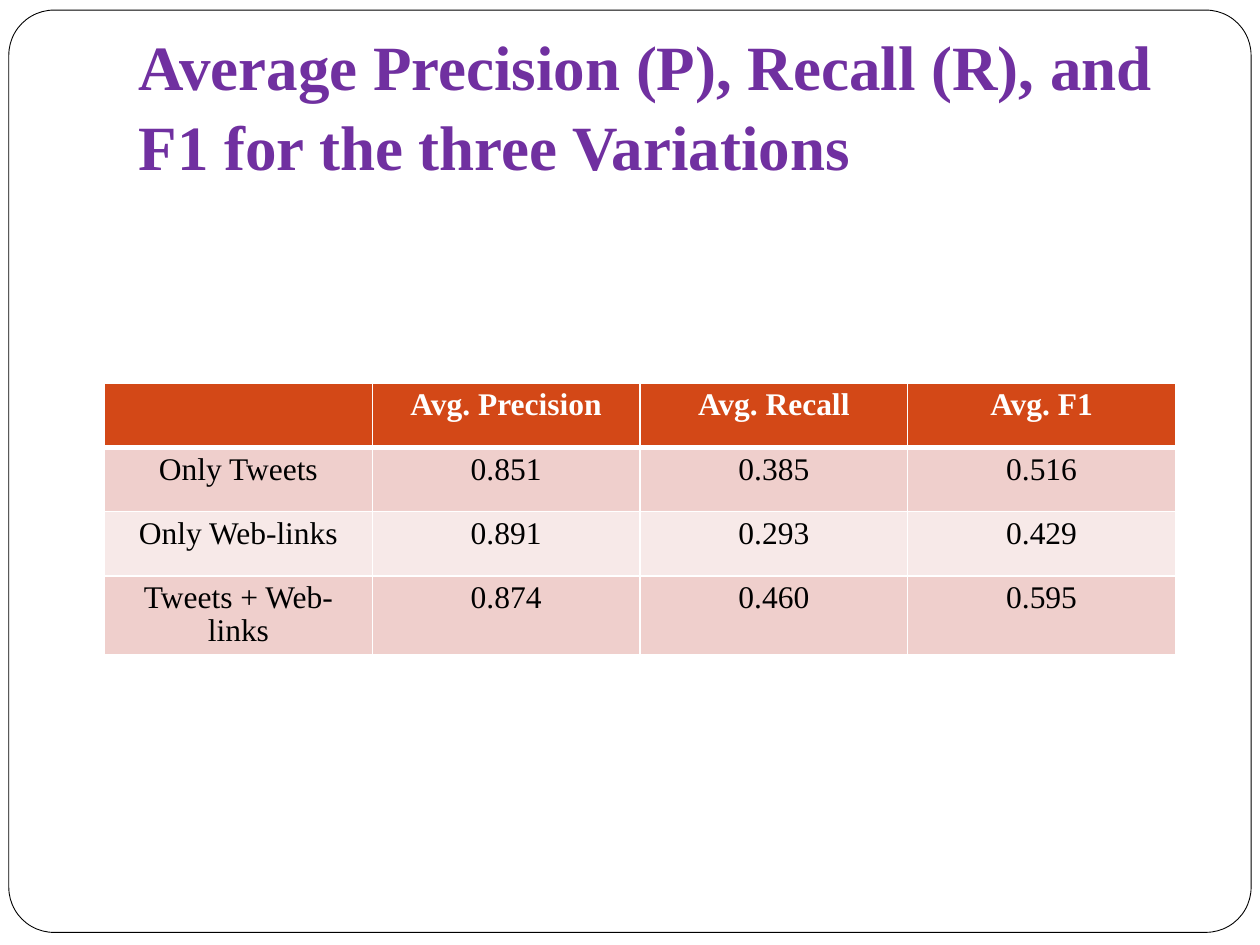
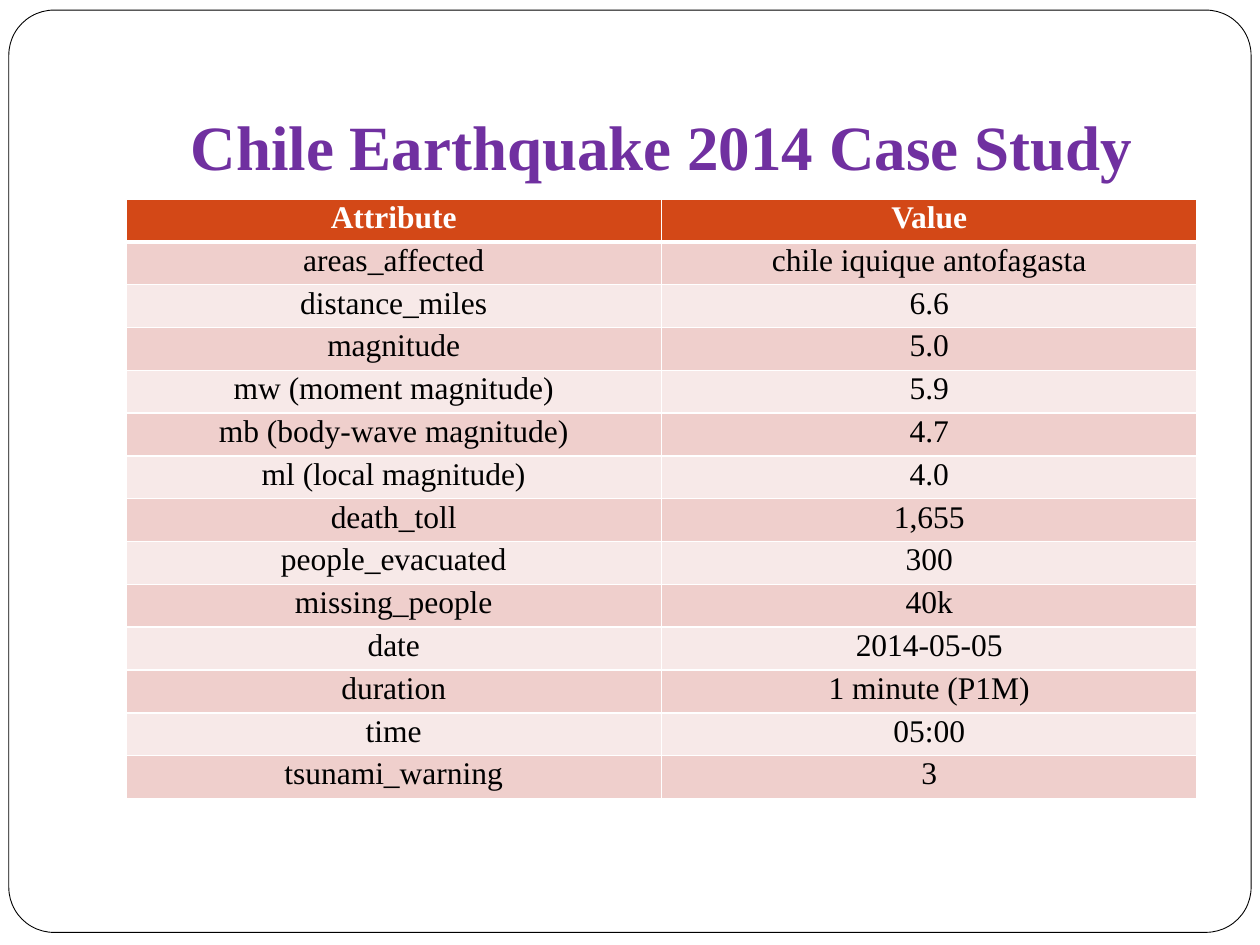
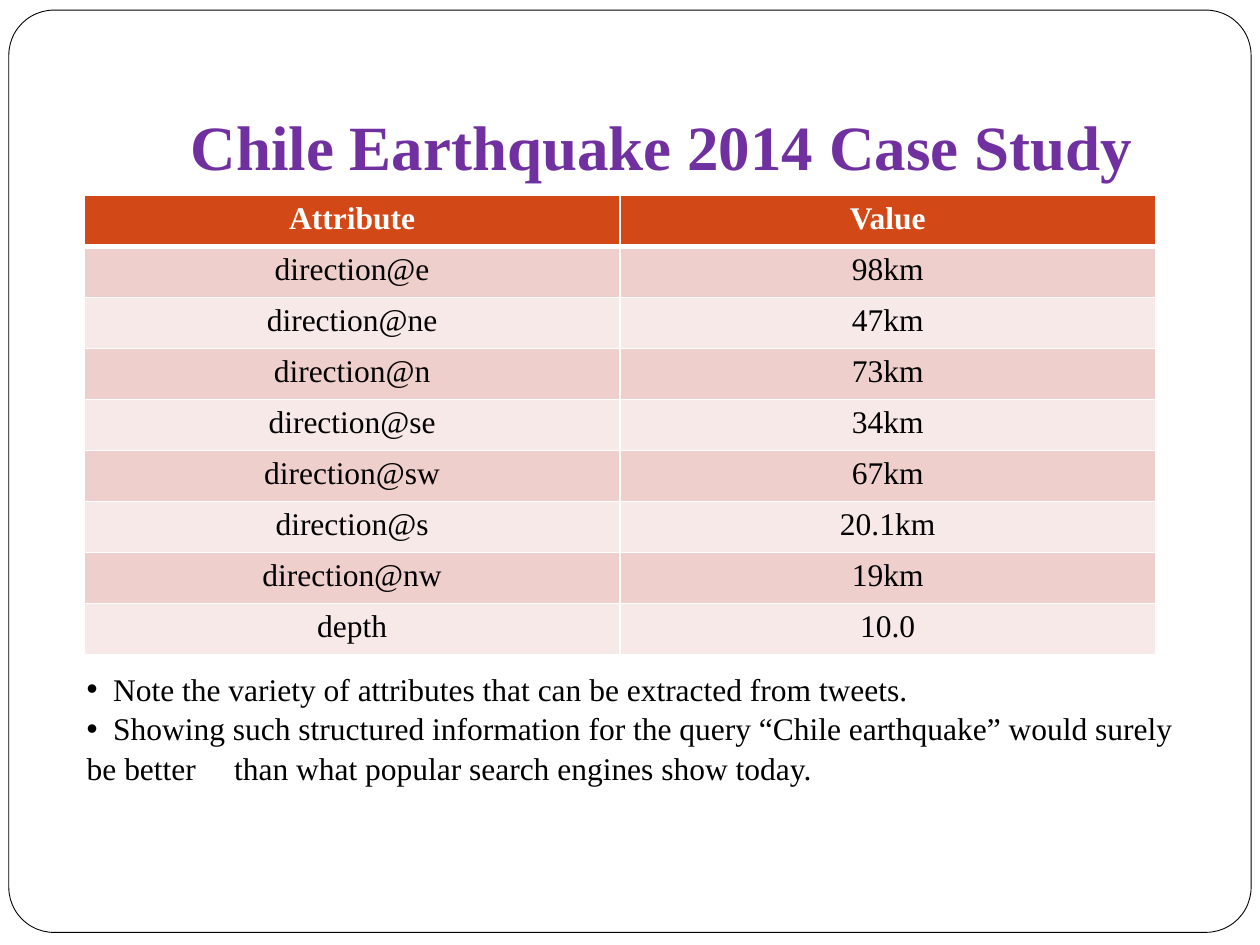
from dataclasses import dataclass

import lxml.etree
import pptx
import pptx.dml.color
import pptx.enum.shapes
import pptx.enum.text
import pptx.oxml.ns
import pptx.presentation
import pptx.shapes.autoshape
import pptx.slide
import pptx.table
import pptx.text.text
import pptx.util

Inches = pptx.util.Inches
Pt = pptx.util.Pt
RGBColor = pptx.dml.color.RGBColor
Align = pptx.enum.text.PP_ALIGN
qn = pptx.oxml.ns.qn

FONT = "Times New Roman"
WHITE = RGBColor(0xFF, 0xFF, 0xFF)
BLACK = RGBColor(0x00, 0x00, 0x00)
PURPLE = RGBColor(0x70, 0x30, 0xA0)
HEADER = RGBColor(0xD3, 0x48, 0x17)
BAND_DARK = RGBColor(0xEF, 0xCF, 0xCC)
BAND_LIGHT = RGBColor(0xF7, 0xE9, 0xE8)
TABLE_WIDTH = 8.5
TITLE_SIZE = 36
BODY_SIZE = 18
TITLE_SPACING = 1.05
NOTE_SPACING = 1.05
NOTE_TABS = (0.21, 1.17)


@dataclass
class TableSpec:
    left: float
    top: float
    row_height: float
    rows: list[tuple[str, ...]]
    margin: float = 0.05
    line_spacing: float = 1.0


@dataclass
class SlideSpec:
    title: str
    align: Align
    table: TableSpec
    notes: tuple[str, ...] = ()


CASE_TITLE = "Chile Earthquake 2014 Case Study"

SLIDES = [
    SlideSpec(
        "Average Precision (P), Recall (R), and F1 for the three Variations",
        Align.LEFT,
        TableSpec(0.83, 3.04, 0.51, [
            ("", "Avg. Precision", "Avg. Recall", "Avg. F1"),
            ("Only Tweets", "0.851", "0.385", "0.516"),
            ("Only Web-links", "0.891", "0.293", "0.429"),
            ("Tweets + Web-links", "0.874", "0.460", "0.595"),
        ], line_spacing=0.95),
    ),
    SlideSpec(
        CASE_TITLE,
        Align.CENTER,
        TableSpec(1, 1.58, 0.34, [
            ("Attribute", "Value"),
            ("areas_affected", "chile iquique antofagasta"),
            ("distance_miles", "6.6"),
            ("magnitude", "5.0"),
            ("mw (moment magnitude)", "5.9"),
            ("mb (body-wave magnitude)", "4.7"),
            ("ml (local magnitude)", "4.0"),
            ("death_toll", "1,655"),
            ("people_evacuated", "300"),
            ("missing_people", "40k"),
            ("date", "2014-05-05"),
            ("duration", "1 minute (P1M)"),
            ("time", "05:00"),
            ("tsunami_warning", "3"),
        ], margin=0.01),
    ),
    SlideSpec(
        CASE_TITLE,
        Align.CENTER,
        TableSpec(0.67, 1.55, 0.405, [
            ("Attribute", "Value"),
            ("direction@e", "98km"),
            ("direction@ne", "47km"),
            ("direction@n", "73km"),
            ("direction@se", "34km"),
            ("direction@sw", "67km"),
            ("direction@s", "20.1km"),
            ("direction@nw", "19km"),
            ("depth", "10.0"),
        ]),
        (
            "\tNote the variety of attributes that can be extracted from tweets.",
            "\tShowing such structured information for the query “Chile earthquake” "
            "would surely be better\tthan what popular search engines show today.",
        ),
    ),
]


def style_runs(p: pptx.text.text._Paragraph, size: int, color: RGBColor, bold: bool = False) -> None:
    for r in p.runs:
        r.font.name = FONT
        r.font.size = Pt(size)
        r.font.bold = bold
        r.font.color.rgb = color


def add_frame(s: pptx.slide.Slide) -> None:
    """Draw the rounded page outline behind everything else."""
    sp = s.shapes.add_shape(
        pptx.enum.shapes.MSO_SHAPE.ROUNDED_RECTANGLE,
        Inches(0.07), Inches(0.08), Inches(9.86), Inches(7.32),
    )
    sp.adjustments[0] = 0.049
    sp.shadow.inherit = False
    sp.fill.solid()
    sp.fill.fore_color.rgb = WHITE
    sp.line.color.rgb = BLACK
    sp.line.width = Pt(0.5)
    s.shapes.title._element.addprevious(sp._element)


def set_title(s: pptx.slide.Slide, text: str, align: Align) -> None:
    sp = s.shapes.title
    sp.left, sp.top, sp.width, sp.height = Inches(1), Inches(0.3), Inches(8.5), Inches(1.25)
    tf = sp.text_frame
    tf.text = text
    tf.word_wrap = True
    tf.auto_size = pptx.enum.text.MSO_AUTO_SIZE.NONE
    tf.vertical_anchor = pptx.enum.text.MSO_ANCHOR.BOTTOM
    tf.margin_left = tf.margin_right = tf.margin_bottom = Inches(0.1)
    tf.margin_top = Inches(0.05)
    p = tf.paragraphs[0]
    p.alignment = align
    p.line_spacing = TITLE_SPACING
    style_runs(p, TITLE_SIZE, PURPLE, bold=True)


def set_borders(cell: pptx.table._Cell, top: float, bottom: float) -> None:
    tc_pr = cell._tc.get_or_add_tcPr()
    for side, width in (("L", 1), ("R", 1), ("T", top), ("B", bottom)):
        ln = lxml.etree.SubElement(tc_pr, qn(f"a:ln{side}"), w=str(Pt(width)))
        fill = lxml.etree.SubElement(ln, qn("a:solidFill"))
        lxml.etree.SubElement(fill, qn("a:srgbClr"), val=str(WHITE))


def add_banded_table(s: pptx.slide.Slide, spec: TableSpec) -> None:
    n_rows, n_cols = len(spec.rows), len(spec.rows[0])
    table = s.shapes.add_table(
        n_rows, n_cols, Inches(spec.left), Inches(spec.top),
        Inches(TABLE_WIDTH), Inches(spec.row_height * n_rows),
    ).table
    for i, values in enumerate(spec.rows):
        is_header = i == 0
        band = HEADER if is_header else BAND_DARK if i % 2 else BAND_LIGHT
        for j, value in enumerate(values):
            cell = table.cell(i, j)
            cell.margin_top = cell.margin_bottom = Inches(spec.margin)
            set_borders(cell, top=3 if i == 1 else 1, bottom=3 if is_header else 1)
            cell.fill.solid()
            cell.fill.fore_color.rgb = band
            cell.text = value
            p = cell.text_frame.paragraphs[0]
            p.alignment = Align.CENTER
            p.line_spacing = spec.line_spacing
            style_runs(p, BODY_SIZE, WHITE if is_header else BLACK, bold=is_header)


def add_bullet(p: pptx.text.text._Paragraph) -> None:
    """Give the paragraph a bullet with no hanging indent, and its tab stops."""
    p_pr = p._p.get_or_add_pPr()
    p_pr.set("marL", "0")
    p_pr.set("indent", "0")
    lxml.etree.SubElement(p_pr, qn("a:buFont"), typeface="Arial")
    lxml.etree.SubElement(p_pr, qn("a:buChar"), char="•")
    tabs = lxml.etree.SubElement(p_pr, qn("a:tabLst"))
    for stop in NOTE_TABS:
        lxml.etree.SubElement(tabs, qn("a:tab"), pos=str(Inches(stop)), algn="l")


def add_notes_box(s: pptx.slide.Slide, notes: tuple[str, ...]) -> None:
    sp = s.shapes.add_textbox(Inches(0.59), Inches(5.25), Inches(8.9), Inches(1.01))
    tf = sp.text_frame
    tf.word_wrap = True
    tf.auto_size = pptx.enum.text.MSO_AUTO_SIZE.SHAPE_TO_FIT_TEXT
    for i, note in enumerate(notes):
        p = tf.add_paragraph() if i else tf.paragraphs[0]
        p.text = note
        add_bullet(p)
        p.line_spacing = NOTE_SPACING
        style_runs(p, BODY_SIZE, BLACK)


def add_slide(prs: pptx.presentation.Presentation, spec: SlideSpec) -> None:
    s = prs.slides.add_slide(prs.slide_layouts.get_by_name("Title Only"))
    add_frame(s)
    set_title(s, spec.title, spec.align)
    add_banded_table(s, spec.table)
    if spec.notes:
        add_notes_box(s, spec.notes)


def main() -> None:
    prs = pptx.Presentation()
    prs.slide_width, prs.slide_height = Inches(10), Inches(7.5)
    for spec in SLIDES:
        add_slide(prs, spec)
    prs.save("out.pptx")


if __name__ == "__main__":
    main()
